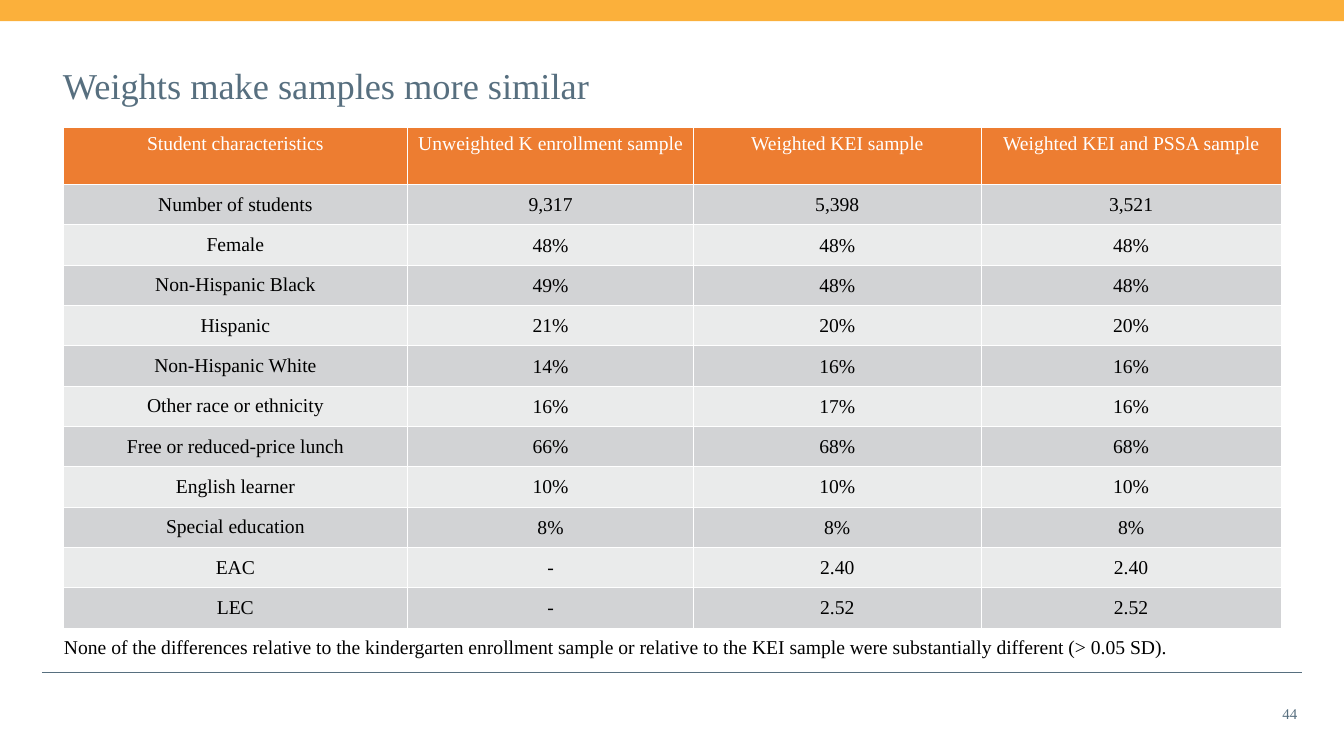
from lxml import etree
from pptx import Presentation
from pptx.dml.color import RGBColor
from pptx.enum.shapes import MSO_CONNECTOR, MSO_SHAPE
from pptx.enum.text import MSO_ANCHOR, PP_ALIGN
from pptx.oxml.ns import qn
from pptx.util import Inches, Pt

RECT, STRAIGHT = MSO_SHAPE.RECTANGLE, MSO_CONNECTOR.STRAIGHT
TOP, MIDDLE = MSO_ANCHOR.TOP, MSO_ANCHOR.MIDDLE
LEFT, CENTER, RIGHT = PP_ALIGN.LEFT, PP_ALIGN.CENTER, PP_ALIGN.RIGHT

FONT = "Times New Roman"
COLORS = {"slate": "576F7F", "gold": "FBB03B", "orange": "ED7D31",
          "dark": "D2D3D5", "light": "EAEBEB", "white": "FFFFFF", "black": "000000"}
SIDES = ("left", "right", "top", "bottom")
WIDE, TIGHT, FLAT = (0.2, 0.2, 0.1, 0.1), (0.02, 0.02, 0.02, 0), (0.02, 0.02, 0.1, 0.1)

COLS = (6.84, 5.67, 5.71, 5.95)
HEAD_H, ROW_H = 1.13, 0.8
HEADS = ("Student characteristics", "Unweighted K enrollment sample",
         "Weighted KEI sample", "Weighted KEI and PSSA sample")
ROWS = (
    ("Number of students", "9,317", "5,398", "3,521"),
    ("Female", "48%", "48%", "48%"),
    ("Non-Hispanic Black", "49%", "48%", "48%"),
    ("Hispanic", "21%", "20%", "20%"),
    ("Non-Hispanic White", "14%", "16%", "16%"),
    ("Other race or ethnicity", "16%", "17%", "16%"),
    ("Free or reduced-price lunch", "66%", "68%", "68%"),
    ("English learner", "10%", "10%", "10%"),
    ("Special education", "8%", "8%", "8%"),
    ("EAC", "-", "2.40", "2.40"),
    ("LEC", "-", "2.52", "2.52"),
)
NOTE = ("None of the differences relative to the kindergarten enrollment sample or "
        "relative to the KEI sample were substantially different (> 0.05 SD).")


def color(name):
    return RGBColor.from_string(COLORS[name])


def write(frame, text, size, ink, align):
    frame.text = text
    para = frame.paragraphs[0]
    para.alignment = align
    for key, value in {"name": FONT, "size": Pt(size), "bold": False}.items():
        setattr(para.runs[0].font, key, value)
    para.runs[0].font.color.rgb = color(ink)


def inset(item, gaps):
    for side, gap in zip(SIDES, gaps):
        setattr(item, "margin_" + side, Inches(gap))


def edge(cell, base):
    """Draw white cell borders, the bottom one `base` points wide."""
    props = cell._tc.get_or_add_tcPr()
    for tag, width in (("lnL", 1), ("lnR", 1), ("lnT", 1), ("lnB", base)):
        line = etree.SubElement(props, qn("a:" + tag), w=str(Pt(width)))
        fill = etree.SubElement(line, qn("a:solidFill"))
        etree.SubElement(fill, qn("a:srgbClr"), val=COLORS["white"])


def style(cell, text, fill, ink="black", gaps=WIDE, anchor=MIDDLE, align=CENTER, base=1):
    edge(cell, base)
    cell.fill.solid()
    cell.fill.fore_color.rgb = color(fill)
    inset(cell, gaps)
    cell.vertical_anchor = anchor
    write(cell.text_frame, text, 28, ink, align)


def add_frame(slide, width):
    """Add the band across the top and the rule above the footer."""
    band = slide.shapes.add_shape(RECT, 0, 0, Inches(width), Inches(0.42))
    band.shadow.inherit = False
    band.fill.solid()
    band.fill.fore_color.rgb = color("gold")
    band.line.fill.background()
    side, y = 0.83, Inches(13.33)
    rule = slide.shapes.add_connector(STRAIGHT, Inches(side), y, Inches(width - side), y)
    rule.line.color.rgb = color("slate")
    rule.line.width = Pt(0.75)
    etree.SubElement(rule._element.spPr, qn("a:effectLst"))


def add_title(slide, box, text):
    title = slide.shapes.title
    for key, value in zip(("left", "top", "width", "height"), box):
        setattr(title, key, Inches(value))
    inset(title.text_frame, (0, 0, 0, 0))
    title.text_frame.vertical_anchor = TOP
    write(title.text_frame, text, 52, "slate", LEFT)


def add_grid(slide, left, top):
    count = len(ROWS) + 2
    height = HEAD_H + ROW_H * (count - 1)
    table = slide.shapes.add_table(count, len(COLS), Inches(left), Inches(top),
                                   Inches(sum(COLS)), Inches(height)).table
    for col, width in zip(table.columns, COLS):
        col.width = Inches(width)
    for i, row in enumerate(table.rows):
        row.height = Inches(ROW_H if i else HEAD_H)
    for c, text in enumerate(HEADS):
        style(table.cell(0, c), text, "orange", "white", anchor=TOP, base=3)
    for r, row in enumerate(ROWS, 1):
        for c, text in enumerate(row):
            gaps = WIDE if c == 0 or (r, c) == (1, 1) else TIGHT
            style(table.cell(r, c), text, "dark" if r % 2 else "light", gaps=gaps)
    note = table.cell(count - 1, 0)
    note.merge(table.cell(count - 1, len(COLS) - 1))
    style(note, NOTE, "white", gaps=FLAT, align=LEFT)


def add_number(slide, box, text):
    frame = slide.shapes.add_textbox(*map(Inches, box)).text_frame
    frame.word_wrap = True
    frame.vertical_anchor = MIDDLE
    write(frame, text, 21.3, "slate", RIGHT)


def main():
    deck = Presentation()
    deck.slide_width, deck.slide_height = Inches(26.67), Inches(15)
    slide = deck.slides.add_slide(deck.slide_layouts[5])
    add_frame(slide, 26.67)
    add_title(slide, (1.25, 1.25, 24.17, 1.33), "Weights make samples more similar")
    add_grid(slide, 1.25, 2.53)
    add_number(slide, (24.8, 13.76, 1.04, 0.8), "44")
    deck.save("out.pptx")


if __name__ == "__main__":
    main()
